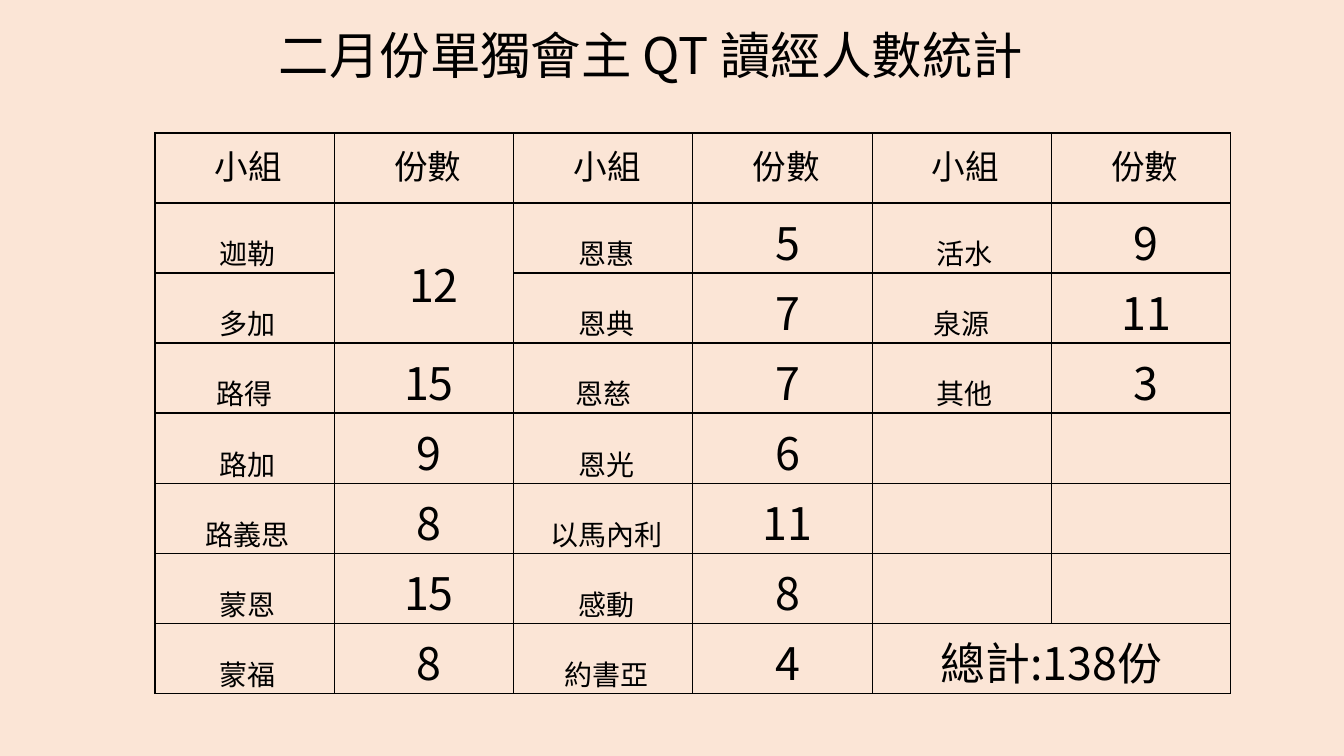
from lxml.etree import SubElement
from pptx import Presentation
from pptx.dml.color import RGBColor
from pptx.enum.text import MSO_AUTO_SIZE, PP_ALIGN
from pptx.oxml.ns import qn
from pptx.util import Emu, Pt

FONT = "Noto Sans CJK JP"
BLACK = "000000"
PEACH = "FBE5D6"
NBSP = chr(160)

HEADER = ["小組", "份數"] * 3
ROWS = [
    ["迦勒", NBSP + "12", "恩惠", "5", "活水", "9"],
    ["多加", "", "恩典", "7", "泉源 ", "11"],
    ["路得 ", "15", "恩慈 ", "7", "其他", "3"],
    ["路加", "9", "恩光", "6", "", ""],
    ["路義思", "8", "以馬內利", "11", "", ""],
    ["蒙恩", "15", "感動", "8", "", ""],
    ["蒙福", "8", "約書亞", "4", "總計:138份" + NBSP, ""],
]


def px(n):
    return Emu(round(n * 914400 / 100.8))


def color(hex_string):
    return RGBColor.from_string(hex_string)


def format_run(r, size):
    r.font.size = Pt(size)
    r.font.name = FONT
    r.font.color.rgb = color(BLACK)
    SubElement(r._r.get_or_add_rPr(), qn("a:ea"), typeface=FONT)


def add_title(s, text, x, y, w, h):
    tf = s.shapes.add_textbox(px(x), px(y), px(w), px(h)).text_frame
    tf.word_wrap = True
    tf.auto_size = MSO_AUTO_SIZE.SHAPE_TO_FIT_TEXT
    tf.text = text
    format_run(tf.paragraphs[0].runs[0], 36)


def set_borders(cell):
    tc_pr = cell._tc.get_or_add_tcPr()
    for side in ("a:lnL", "a:lnR", "a:lnT", "a:lnB"):
        ln = SubElement(tc_pr, qn(side), w=str(Pt(1)))
        fill = SubElement(ln, qn("a:solidFill"))
        SubElement(fill, qn("a:srgbClr"), val=BLACK)


def fill_cell(cell, text, size, line_spacing, space_after=None):
    cell.margin_left = cell.margin_right = px(7)
    cell.margin_top = cell.margin_bottom = 0
    p = cell.text_frame.paragraphs[0]
    p.text = NBSP + text
    p.alignment = PP_ALIGN.CENTER
    p.line_spacing = line_spacing
    p.space_after = space_after
    format_run(p.runs[0], size)


def add_count_table(s, x, y, w, row_h):
    n_rows, n_cols = len(ROWS) + 1, len(HEADER)
    table = s.shapes.add_table(
        n_rows, n_cols, px(x), px(y), px(w), px(row_h * n_rows)).table
    table.first_row = table.horz_banding = False

    # Grid without fill
    for cell in table.iter_cells():
        set_borders(cell)
        cell.fill.background()

    # Shared count of the first two groups, and the total
    table.cell(1, 1).merge(table.cell(2, 1))
    table.cell(7, 4).merge(table.cell(7, 5))

    # Header, then group names and counts
    for col, text in enumerate(HEADER):
        fill_cell(table.cell(0, col), text, 24, 1.15, Pt(8))
    for row, texts in enumerate(ROWS, 1):
        for col, text in enumerate(texts):
            cell = table.cell(row, col)
            if text:
                is_name = col % 2 == 0 and not cell.is_merge_origin
                tall = cell.is_merge_origin and cell.span_height > 1
                fill_cell(cell, text, 20 if is_name else 32,
                          Pt(80 if tall else 50))


def main():
    prs = Presentation()
    prs.slide_width, prs.slide_height = px(1344), px(756)
    s = prs.slides.add_slide(prs.slide_layouts[6])
    s.background.fill.solid()
    s.background.fill.fore_color.rgb = color(PEACH)

    add_title(s, "二月份單獨會主 QT 讀經人數統計", 269, 19, 858, 72)
    add_count_table(s, 155, 133, 1076, 70)
    prs.save("out.pptx")


if __name__ == "__main__":
    main()
